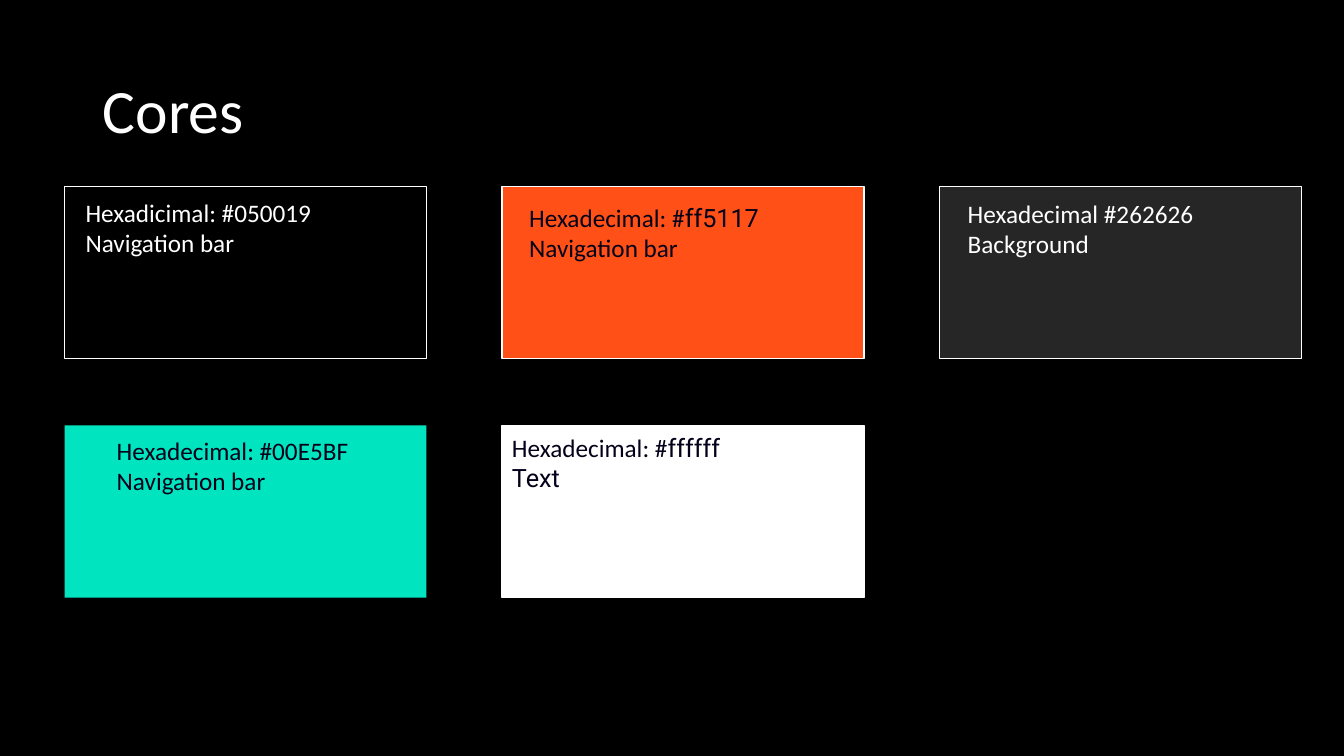
from pptx import Presentation
from pptx.dml.color import RGBColor
from pptx.enum.shapes import MSO_SHAPE as Shape
from pptx.enum.text import MSO_ANCHOR as Anchor, MSO_AUTO_SIZE as AutoSize, PP_ALIGN as Align
from pptx.util import Inches, Pt

COLORS = {
    "black": "000000",
    "white": "FFFFFF",
    "navy": "050019",
    "orange": "FF5117",
    "gray": "262626",
    "teal": "00E5BF",
}
BODY, ACCENT = "Calibri", "Roboto"
GRID_LEFT, GRID_TOP = 0.64, 1.85
COLUMN_STEP, ROW_STEP = 4.34, 2.37
SWATCH_WIDTH, SWATCH_HEIGHT = 3.59, 1.71

# Each swatch: column, row, fill, outline, ink, label box offset and size, lines of runs
SWATCHES = [
    (0, 0, None, "white", "white", (0.11, 0.06, 2.68, 0.71),
     [[("Hexadicimal: #050019", BODY)], [("Navigation bar", BODY)]]),
    (1, 0, "orange", "white", "navy", (0.17, 0.11, 2.58, 1.01),
     [[("Hexadecimal: #", BODY), ("ff5117", ACCENT)], [("Navigation bar", BODY)]]),
    (2, 0, "gray", "white", "white", (0.18, 0.07, 2.77, 0.71),
     [[("Hexadecimal #262626", BODY)], [("Background", BODY)]]),
    (0, 1, "teal", None, "navy", (0.42, 0.05, 2.73, 1.01),
     [[("Hexadecimal: #00E5BF", BODY)], [("Navigation bar", BODY)]]),
    (1, 1, "white", "white", "navy", (0, 0.02, 6.66, 0.71),
     [[("Hexadecimal: #", BODY), ("ffffff", ACCENT)], [("Text", ACCENT)]]),
]


def rgb(name):
    """Return the palette colour of the given name."""
    return RGBColor.from_string(COLORS[name])


def add_run(paragraph, text, font, size, ink):
    """Append one formatted run to a paragraph."""
    run = paragraph.add_run()
    run.text = text
    run.font.name = font
    run.font.size = Pt(size)
    run.font.color.rgb = rgb(ink)


def add_title(slide, left, top, width, height):
    """Place the slide heading in its title placeholder."""
    heading = slide.shapes.title
    heading.left, heading.top = Inches(left), Inches(top)
    heading.width, heading.height = Inches(width), Inches(height)
    heading.text_frame.vertical_anchor = Anchor.MIDDLE
    paragraph = heading.text_frame.paragraphs[0]
    paragraph.alignment = Align.LEFT
    paragraph.line_spacing = 0.9
    add_run(paragraph, "Cores", BODY, 44, "white")


def add_swatch(slide, left, top, fill, outline, ink, label_box, lines):
    """Draw one colour swatch with its label."""
    swatch = slide.shapes.add_shape(
        Shape.RECTANGLE, Inches(left), Inches(top), Inches(SWATCH_WIDTH), Inches(SWATCH_HEIGHT))
    swatch.shadow.inherit = False
    if fill:
        swatch.fill.solid()
        swatch.fill.fore_color.rgb = rgb(fill)
    else:
        swatch.fill.background()
    if outline:
        swatch.line.color.rgb = rgb(outline)
        swatch.line.width = Pt(1)
    else:
        swatch.line.fill.background()

    dx, dy, width, height = label_box
    label = slide.shapes.add_textbox(
        Inches(left + dx), Inches(top + dy), Inches(width), Inches(height)).text_frame
    label.word_wrap = True
    label.auto_size = AutoSize.SHAPE_TO_FIT_TEXT
    for index, runs in enumerate(lines):
        paragraph = label.add_paragraph() if index else label.paragraphs[0]
        for text, font in runs:
            add_run(paragraph, text, font, 18, ink)


def add_palette(slide, left, top):
    """Lay the swatches out on a grid."""
    for column, row, *swatch in SWATCHES:
        add_swatch(slide, left + column * COLUMN_STEP, top + row * ROW_STEP, *swatch)


def main():
    """Build and save the colour slide."""
    deck = Presentation()
    deck.slide_width, deck.slide_height = Inches(13.33), Inches(7.5)
    slide = deck.slides.add_slide(deck.slide_layouts[5])
    slide.background.fill.solid()
    slide.background.fill.fore_color.rgb = rgb("black")
    add_title(slide, 0.92, 0.4, 11.5, 1.45)
    add_palette(slide, GRID_LEFT, GRID_TOP)
    deck.save("out.pptx")


if __name__ == "__main__":
    main()
